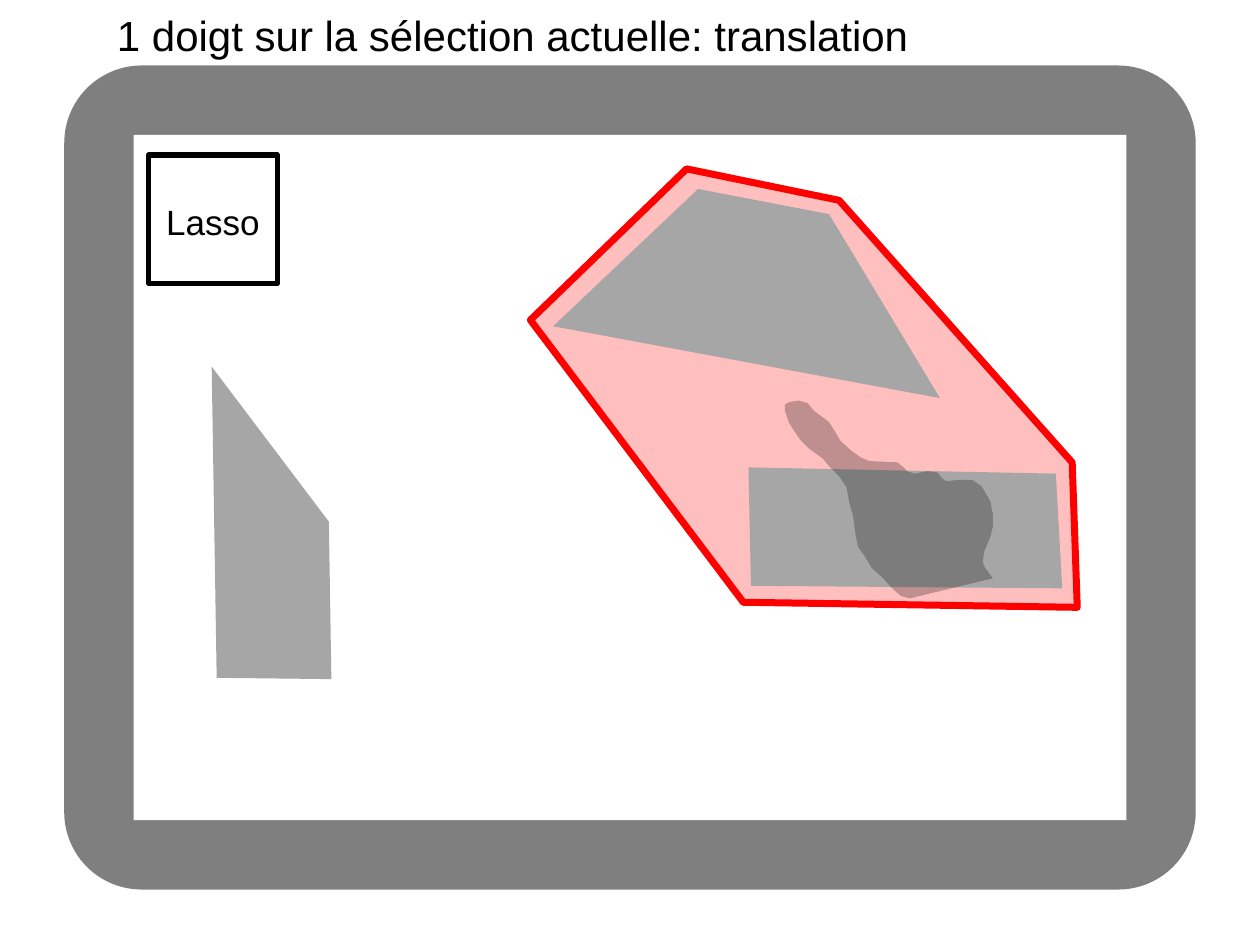
from dataclasses import dataclass

from lxml.etree import SubElement
from pptx import Presentation
from pptx.dml.color import RGBColor
from pptx.enum.shapes import MSO_SHAPE
from pptx.enum.text import MSO_AUTO_SIZE, PP_ALIGN
from pptx.oxml.ns import qn
from pptx.util import Inches, Pt

COLS, ROWS = 1000, 750  # grid over the slide
UNIT = Inches(10) // COLS


@dataclass(frozen=True)
class Theme:
    font: str = "Arial"
    title_size: int = 24
    label_size: int = 20
    black: str = "000000"
    white: str = "FFFFFF"
    red: str = "FF0000"
    grey: str = "A6A6A6"


@dataclass(frozen=True)
class Box:
    """Left, top, width and height in grid units."""
    x: int
    y: int
    w: int
    h: int

    def inner(self, dx, dy, w, h):
        return Box(self.x + dx, self.y + dy, w, h)

    def inset(self, d):
        return self.inner(d, d, self.w - 2 * d, self.h - 2 * d)

    def emu(self):
        return [v * UNIT for v in (self.x, self.y, self.w, self.h)]


THEME = Theme()

# Outlines in grid units from the corner of their box
SELECTION = [(439, 27), (315, 147), (484, 371), (749, 375), (745, 260), (560, 52)]
PIECES = [
    [(66, 431), (62, 184), (155, 307), (157, 432)],
    [(333, 152), (640, 209), (552, 63), (448, 43)],
    [(488, 264), (490, 358), (737, 360), (732, 269)],
]
HAND = [
    (99, 157), (92, 155), (85, 149), (77, 140), (69, 133), (63, 123), (58, 116),
    (56, 106), (54, 91), (51, 81), (49, 69), (43, 60), (35, 52), (30, 46),
    (19, 38), (12, 31), (6, 22), (3, 17), (0, 8), (0, 3), (4, 1), (11, 0),
    (18, 2), (23, 8), (35, 17), (40, 25), (44, 32), (53, 40), (60, 45), (67, 48),
    (89, 49), (93, 52), (97, 56), (103, 58), (113, 56), (121, 57), (125, 62),
    (128, 64), (137, 63), (149, 63), (156, 68), (159, 73), (163, 80), (165, 90),
    (165, 100), (163, 108), (161, 113), (158, 120), (157, 129), (159, 133),
    (165, 141),
]


def paint(sp, fill, alpha=100, line=None, width=0):
    sp.shadow.inherit = False
    sp.fill.solid()
    sp.fill.fore_color.rgb = RGBColor.from_string(fill)
    if alpha < 100:
        color = sp.fill._xPr.find(qn("a:solidFill"))[0]
        SubElement(color, qn("a:alpha"), val=str(alpha * 1000))
    if line:
        sp.line.color.rgb = RGBColor.from_string(line)
        sp.line.width = Pt(width)
    else:
        sp.line.fill.background()


def add_outline(s, box, points, *style):
    start, *rest = [(box.x + x, box.y + y) for x, y in points]
    fb = s.shapes.build_freeform(*start, scale=UNIT)
    fb.add_line_segments(rest, close=True)
    paint(fb.convert_to_shape(), *style)


def add_text(s, box, text, size, align=PP_ALIGN.LEFT, wrap=True):
    tf = s.shapes.add_textbox(*box.emu()).text_frame
    tf.word_wrap = wrap
    tf.auto_size = MSO_AUTO_SIZE.SHAPE_TO_FIT_TEXT
    p = tf.paragraphs[0]
    p.alignment = align
    r = p.add_run()
    r.text = text
    r.font.name = THEME.font
    r.font.size = Pt(size)
    r.font.color.rgb = RGBColor.from_string(THEME.black)


def add_tablet(s, box):
    """Draw the tablet body and return the box of its screen."""
    body = s.shapes.add_shape(MSO_SHAPE.ROUNDED_RECTANGLE, *box.emu())
    body.adjustments[0] = 0.094
    paint(body, THEME.black, 50)
    screen = box.inset(55)
    paint(s.shapes.add_shape(MSO_SHAPE.RECTANGLE, *screen.emu()), THEME.white)
    return screen


def add_canvas(s, screen):
    add_outline(s, screen, SELECTION, THEME.red, 25, THEME.red, 4)
    for piece in PIECES:
        add_outline(s, screen, piece, THEME.grey)


def add_button(s, box, label):
    button = s.shapes.add_shape(MSO_SHAPE.RECTANGLE, *box.emu())
    paint(button, THEME.white, 50, THEME.black, 3)
    add_text(s, box.inner(4, 31, box.w - 8, 44), label, THEME.label_size,
             PP_ALIGN.CENTER, wrap=False)


def main():
    prs = Presentation()
    prs.slide_width, prs.slide_height = COLS * UNIT, ROWS * UNIT
    s = prs.slides.add_slide(prs.slide_layouts[6])

    # Tablet with the drawn pieces and the current selection
    screen = add_tablet(s, Box(51, 52, 898, 654))
    add_canvas(s, screen)

    # Tool button and title
    add_button(s, screen.inner(12, 16, 102, 102), "Lasso")
    add_text(s, Box(83, 3, 861, 51),
             "1 doigt sur la sélection actuelle: translation", THEME.title_size)

    # Hand touching the selection
    add_outline(s, screen.inner(517, 211, 166, 157), HAND, THEME.black, 25)

    prs.save("out.pptx")


if __name__ == "__main__":
    main()
